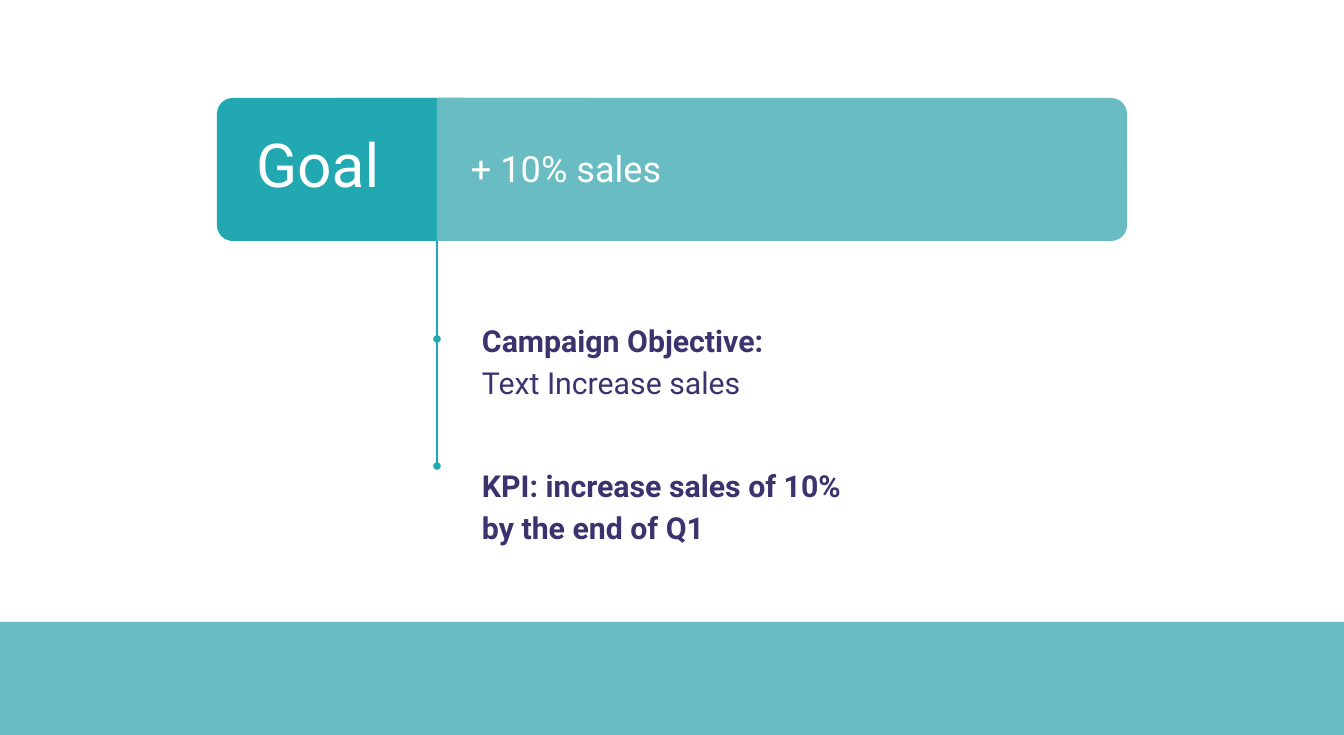
import pptx
import pptx.util
import pptx.dml.color
import pptx.enum.shapes
import pptx.enum.text
import pptx.oxml

PX = 15114
TEAL = pptx.dml.color.RGBColor(0x21, 0xA8, 0xB0)
AQUA = pptx.dml.color.RGBColor(0x69, 0xBC, 0xC1)
INDIGO = pptx.dml.color.RGBColor(0x3B, 0x33, 0x6E)
WHITE = pptx.dml.color.RGBColor(0xFF, 0xFF, 0xFF)
SHAPE = pptx.enum.shapes.MSO_SHAPE
DRAWING = 'xmlns:a="http://schemas.openxmlformats.org/drawingml/2006/main"'


def add_block(shapes, kind, area, color, rounding=None):
    block = shapes.add_shape(kind, *[length * PX for length in area])
    block.shadow.inherit = False
    block.fill.solid()
    block.fill.fore_color.rgb = color
    block.line.fill.background()
    if rounding is not None:
        block.adjustments[0] = rounding


def write_text(box, lines, area, size, color, inset=13, spacing=1.0):
    box.left, box.top, box.width, box.height = [length * PX for length in area]
    frame = box.text_frame
    frame.word_wrap = True
    frame.auto_size = pptx.enum.text.MSO_AUTO_SIZE.NONE
    frame.vertical_anchor = pptx.enum.text.MSO_ANCHOR.MIDDLE
    frame.margin_left = frame.margin_right = inset * PX
    frame.margin_top = frame.margin_bottom = inset * PX
    for index, (text, bold) in enumerate(lines):
        para = frame.add_paragraph() if index else frame.paragraphs[0]
        para.alignment = pptx.enum.text.PP_ALIGN.LEFT
        para.line_spacing = spacing
        para.space_before = pptx.util.Pt(0)
        span = para.add_run()
        span.text = text
        span.font.name = "Roboto"
        span.font.size = pptx.util.Pt(size)
        span.font.bold = bold
        span.font.color.rgb = color


deck = pptx.Presentation()
deck.slide_width = 1344 * PX
deck.slide_height = 735 * PX
page = deck.slides.add_slide(deck.slide_layouts[5])

add_block(page.shapes, SHAPE.RECTANGLE, (0, 622, 1344, 113), AQUA)

for top in (212, 339):
    stem = page.shapes.add_connector(
        pptx.enum.shapes.MSO_CONNECTOR.STRAIGHT,
        437 * PX, top * PX, 437 * PX, (top + 127) * PX)
    stem.line.color.rgb = TEAL
    stem.line.width = pptx.util.Pt(3)
    stem.line._get_or_add_ln().append(
        pptx.oxml.parse_xml(f'<a:tailEnd {DRAWING} type="oval"/>'))
    stem._element.spPr.append(pptx.oxml.parse_xml(f"<a:effectLst {DRAWING}/>"))

details = [
    (313, 91, [("Campaign Objective:", True), ("Text Increase sales", False)]),
    (440, 127, [("KPI: increase sales of 10% by the end of Q1", True)]),
]
for top, height, lines in details:
    write_text(page.shapes.add_textbox(0, 0, 0, 0), lines,
               (469, top, 419, height), 36, INDIGO, spacing=1.15)

banner = page.shapes.add_group_shape()
for left, width, color, rounding in [
    (321, 806, AQUA, 0.11),
    (217, 261, TEAL, 0.11),
    (437, 149, AQUA, 0),
]:
    add_block(banner.shapes, SHAPE.ROUNDED_RECTANGLE,
              (left, 98, width, 143), color, rounding)

write_text(page.shapes.add_textbox(0, 0, 0, 0), [("+ 10% sales", False)],
           (458, 103, 658, 131), 43, WHITE)

title = page.shapes.title
page.shapes.element.append(title.element)
write_text(title, [("Goal", False)], (250, 99, 159, 129), 72, WHITE, inset=6)

deck.save("out.pptx")
